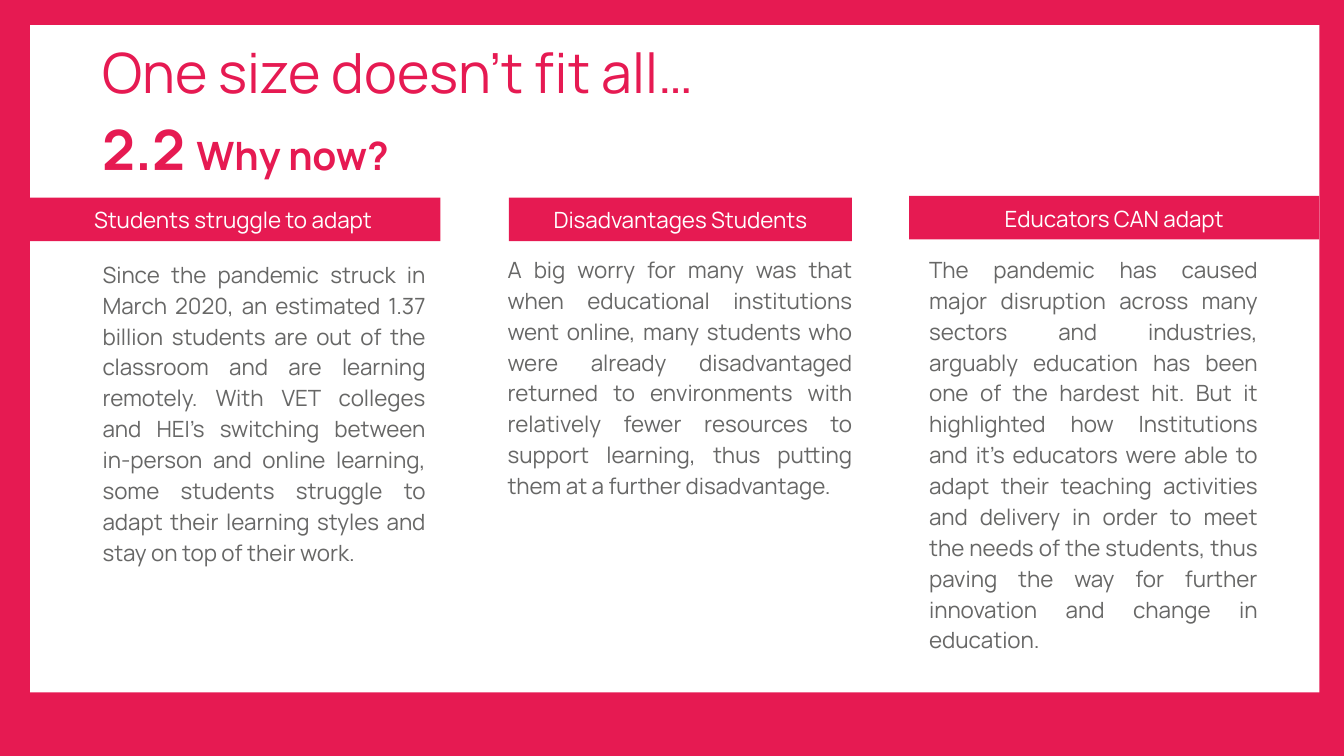
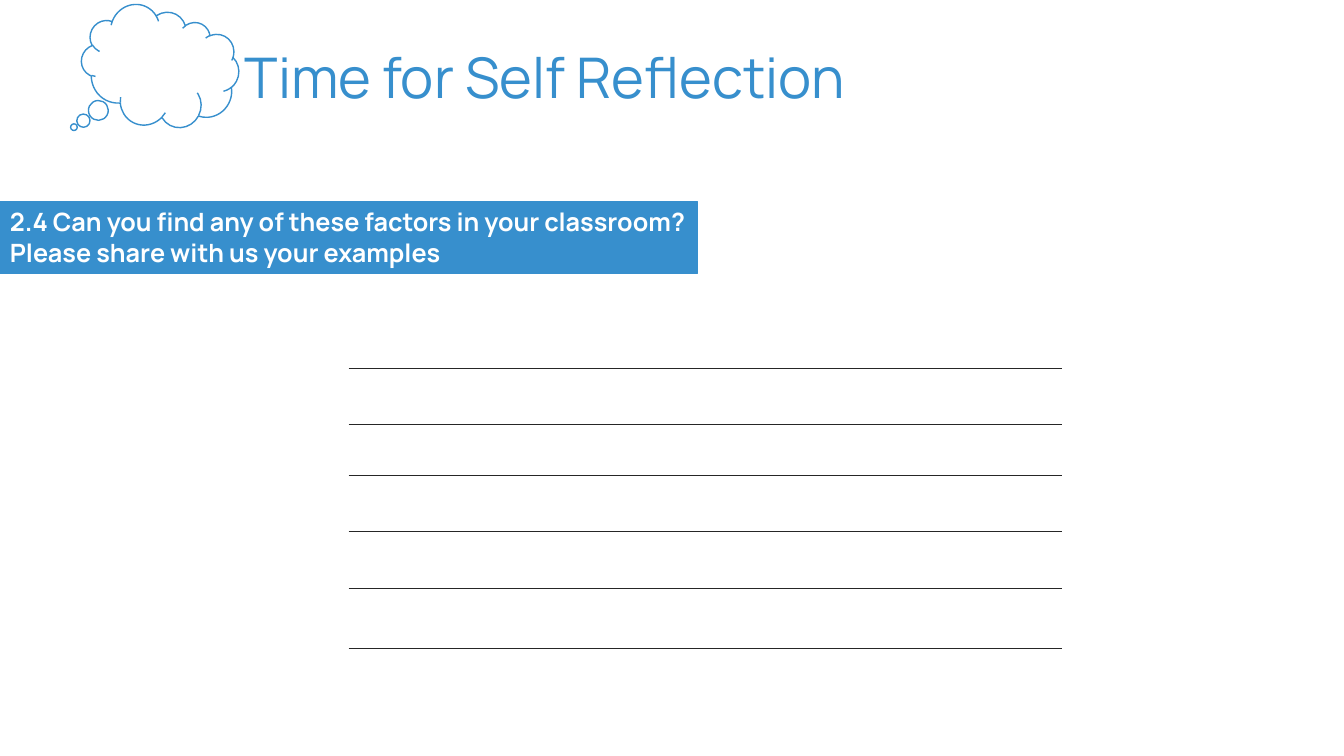
"""Builds two training slides: why now, and time for self reflection."""
from lxml import etree
from pptx import Presentation
from pptx.dml.color import RGBColor
from pptx.enum import shapes, text
from pptx.oxml.ns import qn
from pptx.util import Pt

RED, BLUE, WHITE, GREY, INK = "E61A52", "378FCD", "FFFFFF", "676766", "262626"
WIDTH, HEIGHT = 960, 540
RECT = shapes.MSO_SHAPE.RECTANGLE
TOP, MIDDLE = text.MSO_ANCHOR.TOP, text.MSO_ANCHOR.MIDDLE
LEFT, CENTER, JUSTIFY = text.PP_ALIGN.LEFT, text.PP_ALIGN.CENTER, text.PP_ALIGN.JUSTIFY

PARAGRAPH = {"line_spacing": 1.15, "space_after": Pt(10)}
TITLE = [
    [("One size doesn’t fit all…", 39.6, False)],
    [("2.2 ", 39.6, True), ("Why now?", 27.9, True)],
]
COLUMNS = [
    {
        "head": "Students struggle to adapt ",
        "bar": (21.6, 141.2, 293),
        "body": "Since the pandemic struck in March 2020, an estimated 1.37 billion students are "
                "out of the classroom and are learning remotely. With VET colleges and HEI’s "
                "switching between in-person and online learning, some students struggle to adapt "
                "their learning styles and stay on top of their work.",
        "box": (66.2, 180, 245),
    },
    {
        "head": "Disadvantages Students",
        "bar": (363.5, 141.2, 245),
        "body": "A big worry for many was that when educational institutions went online, many "
                "students who were already disadvantaged returned to environments with relatively "
                "fewer resources to support learning, thus putting them at a further disadvantage.",
        "box": (355.5, 176.5, 260.5),
    },
    {
        "head": "Educators CAN adapt",
        "bar": (649.4, 140, 293),
        "body": "The pandemic has caused major disruption across many sectors and industries, "
                "arguably education has been one of the hardest hit. But it highlighted how "
                "Institutions and it’s educators were able to adapt their teaching activities and "
                "delivery in order to meet the needs of the students, thus paving the way for "
                "further innovation and change in education.",
        "box": (656.6, 176.5, 249),
    },
]
BAR_HEIGHT, BODY_HEIGHT = 31, 342
REFLECTION = "Time for Self Reflection"
QUESTION = ("2.4 Can you find any of these factors in your classroom? "
            "Please share with us your examples")
ANSWER_LINES = [262.8, 303.1, 339.8, 379.4, 420.5, 463]
ANSWER_LEFT, ANSWER_RIGHT = 249.1, 758.9


def rgb(value):
    """Turn a hex string into a colour."""
    return RGBColor.from_string(value)


def add_box(s, box, kind=RECT, fill=WHITE, line=None, weight=1):
    """Add a flat filled shape."""
    sp = s.shapes.add_shape(kind, *map(Pt, box))
    sp.shadow.inherit = False
    sp.fill.solid()
    sp.fill.fore_color.rgb = rgb(fill)
    if line:
        sp.line.color.rgb = rgb(line)
        sp.line.width = Pt(weight)
    else:
        sp.line.fill.background()
    return sp


def add_textbox(s, box):
    """Add an empty text box."""
    return s.shapes.add_textbox(*map(Pt, box))


def write(sp, lines, color, align=LEFT, anchor=TOP, **spacing):
    """Write lines of (text, size, bold) runs as one paragraph."""
    tf = sp.text_frame
    tf.word_wrap = True
    tf.vertical_anchor = anchor
    p = tf.paragraphs[0]
    for name, value in {"alignment": align, **spacing}.items():
        setattr(p, name, value)
    for i, line in enumerate(lines):
        if i:
            p.add_line_break()
        for words, size, bold in line:
            r = p.add_run()
            r.text = words
            for name, value in {"name": "Manrope", "size": Pt(size), "bold": bold}.items():
                setattr(r.font, name, value)
            r.font.color.rgb = rgb(color)


def add_rule(s, y):
    """Add one answer line."""
    line = s.shapes.add_connector(
        shapes.MSO_CONNECTOR.STRAIGHT, Pt(ANSWER_LEFT), Pt(y), Pt(ANSWER_RIGHT), Pt(y))
    line.line.color.rgb = rgb(INK)
    line.line.width = Pt(0.5)
    etree.SubElement(line._element.spPr, qn("a:effectLst"))


def build_why_now(s):
    """Build the framed slide with three columns."""
    add_box(s, (0, 0, WIDTH, HEIGHT), fill=RED)
    add_box(s, (21.6, 18, 920.8, 476.6))
    write(add_textbox(s, (66.2, 25, 828, 100)), TITLE, RED, anchor=MIDDLE, **PARAGRAPH)
    for column in COLUMNS:
        body = add_textbox(s, (*column["box"], BODY_HEIGHT))
        write(body, [[(column["body"], 16, False)]], GREY, JUSTIFY, **PARAGRAPH)
        bar = add_box(s, (*column["bar"], BAR_HEIGHT), fill=RED)
        write(bar, [[(column["head"], 16, False)]], WHITE, CENTER, **PARAGRAPH)


def build_reflection(s):
    """Build the question slide with answer lines."""
    title = add_textbox(s, (167.8, 5, 484, 104.4))
    write(title, [[(REFLECTION, 40, False)]], BLUE, anchor=MIDDLE, line_spacing=0.9)
    cloud = add_box(s, (58.3, 6.5, 110.9, 85), shapes.MSO_SHAPE.CLOUD_CALLOUT, line=BLUE)
    cloud.rotation = 27.8
    for i, value in enumerate((-0.31, 0.77)):
        cloud.adjustments[i] = value
    band = add_box(s, (0, 144, 498.2, 51.1), fill=BLUE, line=BLUE, weight=0.75)
    write(band, [[(QUESTION, 18, True)]], WHITE)
    for y in ANSWER_LINES:
        add_rule(s, y)


def main():
    """Build and save the presentation."""
    prs = Presentation()
    prs.slide_width, prs.slide_height = Pt(WIDTH), Pt(HEIGHT)
    for build in (build_why_now, build_reflection):
        build(prs.slides.add_slide(prs.slide_layouts[6]))
    prs.save("out.pptx")


if __name__ == "__main__":
    main()
